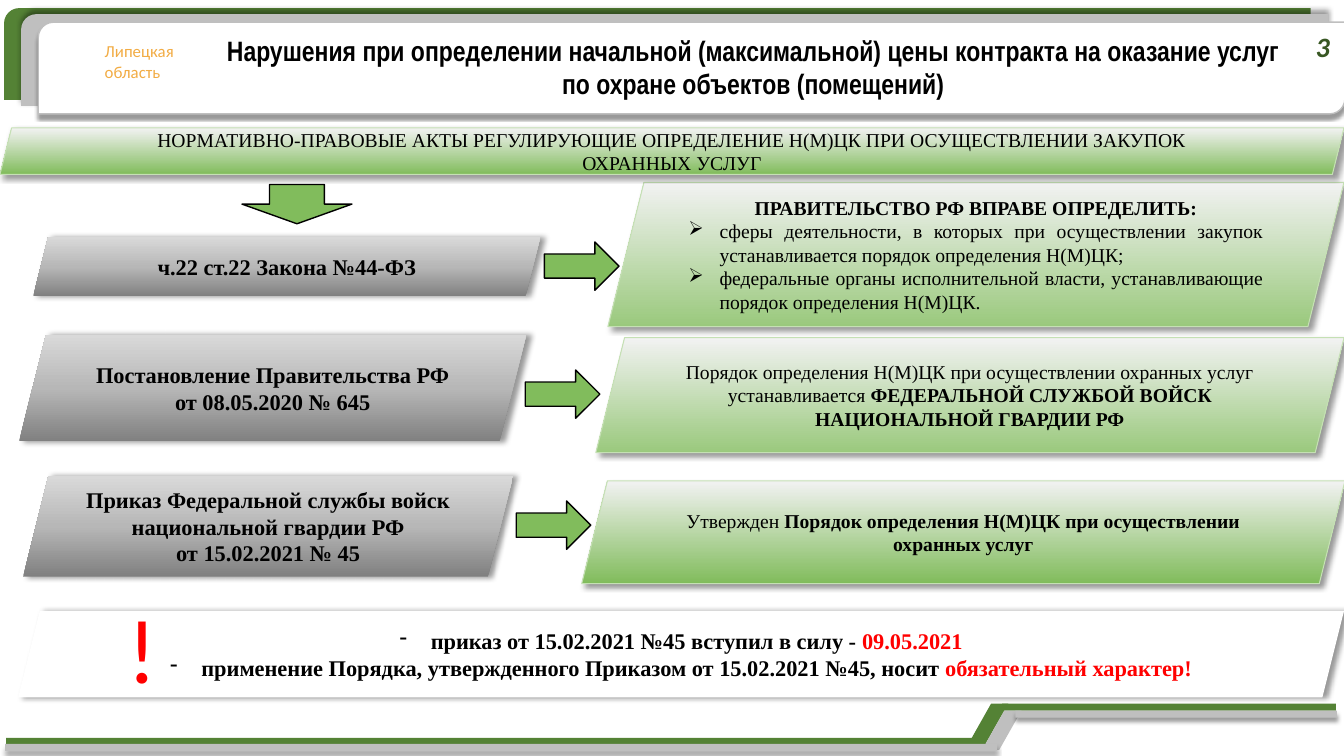
from dataclasses import dataclass

from lxml import etree
from pptx import Presentation
from pptx.dml.color import RGBColor
from pptx.enum.shapes import MSO_SHAPE
from pptx.enum.text import MSO_ANCHOR, PP_ALIGN
from pptx.oxml.ns import qn
from pptx.util import Inches, Pt

PARALLELOGRAM = MSO_SHAPE.PARALLELOGRAM
ARROW = MSO_SHAPE.RIGHT_ARROW
RECTANGLE = MSO_SHAPE.RECTANGLE
HEADER_PLATE = MSO_SHAPE.ROUND_2_DIAG_RECTANGLE
LEFT, CENTER, JUSTIFY = PP_ALIGN.LEFT, PP_ALIGN.CENTER, PP_ALIGN.JUSTIFY
TOP, MIDDLE = MSO_ANCHOR.TOP, MSO_ANCHOR.MIDDLE


@dataclass(frozen=True)
class Theme:
    black: str = "000000"
    white: str = "FFFFFF"
    red: str = "FF0000"
    orange: str = "F2AC44"
    dark_green: str = "548235"
    number_green: str = "385723"
    green: str = "81BC5C"
    edge_green: str = "C5E0B4"
    silver: str = "BFBFBF"
    strong_gradient: tuple = ((0, "81BC5C"), (100, "F2F2F2"))
    soft_gradient: tuple = ((0, "9AC97D"), (100, "F2F2F2"))
    gray_gradient: tuple = ((0, "808080"), (50, "B7B7B7"), (100, "D9D9D9"))
    serif: str = "Times New Roman"
    sans: str = "Calibri"
    narrow: str = "Arial Narrow"
    region: int = 12
    detail: int = 14
    act: int = 16
    heading: int = 20
    exclamation: int = 65


THEME = Theme()


def child(parent, tag, **attributes):
    values = {name: str(value) for name, value in attributes.items()}
    return etree.SubElement(parent, qn(tag), values)


def fill_gradient(shape, stops):
    """Linear gradient running from the bottom edge to the top."""
    shape.fill.gradient()
    shape.fill.gradient_angle = 90
    stop_list = shape._element.spPr.find(qn("a:gradFill")).find(qn("a:gsLst"))
    for stop in list(stop_list):
        stop_list.remove(stop)
    for position, color in stops:
        child(child(stop_list, "a:gs", pos=position * 1000), "a:srgbClr", val=color)


def add_shadow(shape, blur, distance, direction):
    effects = shape._element.spPr.find(qn("a:effectLst"))
    shadow = child(effects, "a:outerShdw", blurRad=Pt(blur), dist=Pt(distance),
                   dir=direction * 60000, algn="ctr", rotWithShape=0)
    child(child(shadow, "a:srgbClr", val=THEME.black), "a:alpha", val=40000)


def style_shape(shape, fill, line=None, shadow=None):
    shape.shadow.inherit = False
    if isinstance(fill, str):
        shape.fill.solid()
        shape.fill.fore_color.rgb = RGBColor.from_string(fill)
    else:
        fill_gradient(shape, fill)
    if line:
        color, width = line
        shape.line.color.rgb = RGBColor.from_string(color)
        shape.line.width = Pt(width)
    else:
        shape.line.fill.background()
    if shadow:
        add_shadow(shape, *shadow)


def add_figure(slide, kind, box, fill, line=None, shadow=None):
    shape = slide.shapes.add_shape(kind, *map(Inches, box))
    style_shape(shape, fill, line, shadow)
    return shape


def add_slant(slide, left, top, fill):
    """Slanted joint of the footer band."""
    points = [(0.22, 0), (0.39, 0), (0.17, 0.39), (0, 0.39)]
    corners = [(Inches(left + x), Inches(top + y)) for x, y in points]
    builder = slide.shapes.build_freeform(*corners[0])
    builder.add_line_segments(corners[1:], close=True)
    style_shape(builder.convert_to_shape(), fill)


def write_text(shape, paragraphs, base, align=CENTER, anchor=MIDDLE, inset=None):
    """Each paragraph is (runs, bullet); each run is (text, format changes)."""
    frame = shape.text_frame
    settings = {"word_wrap": True, "vertical_anchor": anchor}
    if inset is not None:
        sides = ("left", "top", "right", "bottom")
        settings.update({f"margin_{side}": Inches(inset) for side in sides})
    for name, value in settings.items():
        setattr(frame, name, value)
    for index, (runs, bullet) in enumerate(paragraphs):
        paragraph = frame.add_paragraph() if index else frame.paragraphs[0]
        paragraph.alignment = JUSTIFY if bullet == "➢" else align
        if bullet:
            properties = paragraph._p.get_or_add_pPr()
            properties.set("marL", str(Inches(0.31)))
            properties.set("indent", str(-Inches(0.31)))
            child(properties, "a:buChar", char=bullet)
        for text, changes in runs:
            run = paragraph.add_run()
            run.text = text
            formats = {**base, **changes}
            run.font.color.rgb = RGBColor.from_string(formats.pop("color"))
            for name, value in formats.items():
                setattr(run.font, name, value)


def font(name, size, color=THEME.black, **extra):
    return {"name": name, "size": Pt(size), "color": color, **extra}


def plain(*lines):
    return [([(line, {})], None) for line in lines]


def add_label(slide, box, lines, base, align=CENTER, anchor=TOP):
    shape = slide.shapes.add_textbox(*map(Inches, box))
    write_text(shape, plain(*lines), base, align, anchor)


def add_green_panel(slide, box, gradient, paragraphs):
    panel = add_figure(slide, PARALLELOGRAM, box, gradient, (THEME.edge_green, 0.75), (4, 3, 45))
    write_text(panel, paragraphs, font(THEME.serif, THEME.detail), inset=0.04)


def add_act(slide, box, lines):
    act = add_figure(slide, PARALLELOGRAM, box, THEME.gray_gradient, shadow=(4, 3, 0))
    write_text(act, plain(*lines), font(THEME.serif, THEME.act, bold=True))


def add_arrow(slide, left, top, width=0.74, height=0.48, rotation=0):
    arrow = add_figure(slide, ARROW, (left, top, width, height), THEME.green, (THEME.black, 1))
    arrow.rotation = rotation


def add_frame(slide):
    # Header plates
    for left, top, fill, line, shadow in [
        (0.04, 0.08, THEME.dark_green, None, None),
        (0.21, 0.14, THEME.silver, None, (4, 3, 270)),
        (0.38, 0.22, THEME.white, (THEME.silver, 1), (2, 3, 90)),
    ]:
        add_figure(slide, HEADER_PLATE, (left, top, 12.96, 0.91), fill, line, shadow)
    add_label(slide, (0.94, 0.36, 0.91, 0.5), ["Липецкая", "область"],
              font(THEME.sans, THEME.region, THEME.orange), LEFT)
    # Footer bands
    for fill, slant, low, high, shadow in [
        (THEME.dark_green, (9.61, 6.98), (0.06, 7.32, 9.72), (9.94, 6.98, 3.31), None),
        (THEME.silver, (9.74, 7.05), (0.05, 7.38, 9.84), (10.07, 7.05, 3.19), (3, 3, 90)),
    ]:
        add_slant(slide, *slant, fill)
        for bar in (low, high):
            add_figure(slide, RECTANGLE, (*bar, 0.07), fill, shadow=shadow)


def add_rules(slide):
    bold, red = {"bold": True}, {"color": THEME.red}
    # What each act establishes
    add_green_panel(slide, (5.91, 3.35, 7.42, 1.14), THEME.soft_gradient, [([
        ("Порядок определения Н(М)ЦК при осуществлении охранных услуг устанавливается ", {}),
        ("ФЕДЕРАЛЬНОЙ СЛУЖБОЙ ВОЙСК НАЦИОНАЛЬНОЙ ГВАРДИИ РФ", bold)], None)])
    add_green_panel(slide, (6.03, 1.81, 7.3, 1.43), THEME.soft_gradient, [
        ([("ПРАВИТЕЛЬСТВО РФ ВПРАВЕ ОПРЕДЕЛИТЬ:", bold)], None),
        ([("сферы деятельности, в которых при осуществлении закупок "
           "устанавливается порядок определения Н(М)ЦК;", {})], "➢"),
        ([("федеральные органы исполнительной власти, устанавливающие "
           "порядок определения Н(М)ЦК.", {})], "➢")])
    add_green_panel(slide, (5.77, 4.77, 7.57, 1.02), THEME.strong_gradient, [([
        ("Утвержден ", {}),
        ("Порядок определения Н(М)ЦК при осуществлении охранных услуг", bold)], None)])
    # Acts
    add_act(slide, (0.19, 3.32, 5.03, 1.06),
            ["Постановление Правительства РФ", "от 08.05.2020 № 645"])
    add_act(slide, (0.33, 2.35, 5.03, 0.59), ["ч.22 ст.22 Закона №44-ФЗ"])
    add_act(slide, (0.23, 4.72, 4.86, 1),
            ["Приказ Федеральной службы войск национальной гвардии РФ", "от 15.02.2021 № 45"])
    # Banner and arrows
    add_green_panel(slide, (0, 1.27, 13.33, 0.46), THEME.strong_gradient, plain(
        "НОРМАТИВНО-ПРАВОВЫЕ АКТЫ РЕГУЛИРУЮЩИЕ ОПРЕДЕЛЕНИЕ Н(М)ЦК "
        "ПРИ ОСУЩЕСТВЛЕНИИ ЗАКУПОК ОХРАННЫХ УСЛУГ"))
    for left, top in [(5.12, 4.97), (5.21, 3.67), (5.4, 2.4)]:
        add_arrow(slide, left, top)
    add_arrow(slide, 2.75, 1.48, 0.39, 1.09, rotation=90)
    # Conclusion
    conclusion = add_figure(slide, PARALLELOGRAM, (0.18, 6.06, 13.15, 0.86), THEME.white,
                            shadow=(4, 3, 0))
    write_text(conclusion, [
        ([("приказ от 15.02.2021 №45 вступил в силу - ", {}), ("09.05.2021", red)], "-"),
        ([("применение Порядка, утвержденного Приказом от 15.02.2021 №45, носит ", {}),
          ("обязательный характер!", red)], "-"),
    ], font(THEME.serif, THEME.act, bold=True))
    add_label(slide, (1.1, 5.83, 0.62, 1.19), ["!"],
              font(THEME.sans, THEME.exclamation, THEME.red))


def main():
    presentation = Presentation()
    presentation.slide_width, presentation.slide_height = Inches(13.33), Inches(7.5)
    slide = presentation.slides.add_slide(presentation.slide_layouts[6])
    add_frame(slide)
    add_label(slide, (2.03, 0.28, 10.88, 0.77),
              ["Нарушения при определении начальной (максимальной) цены контракта "
               "на оказание услуг по охране объектов (помещений)"],
              font(THEME.narrow, THEME.heading, bold=True))
    add_label(slide, (12.95, 0.27, 0.28, 0.37), ["3"],
              font(THEME.sans, THEME.heading, THEME.number_green, bold=True, italic=True),
              anchor=MIDDLE)
    add_rules(slide)
    presentation.save("out.pptx")


if __name__ == "__main__":
    main()
